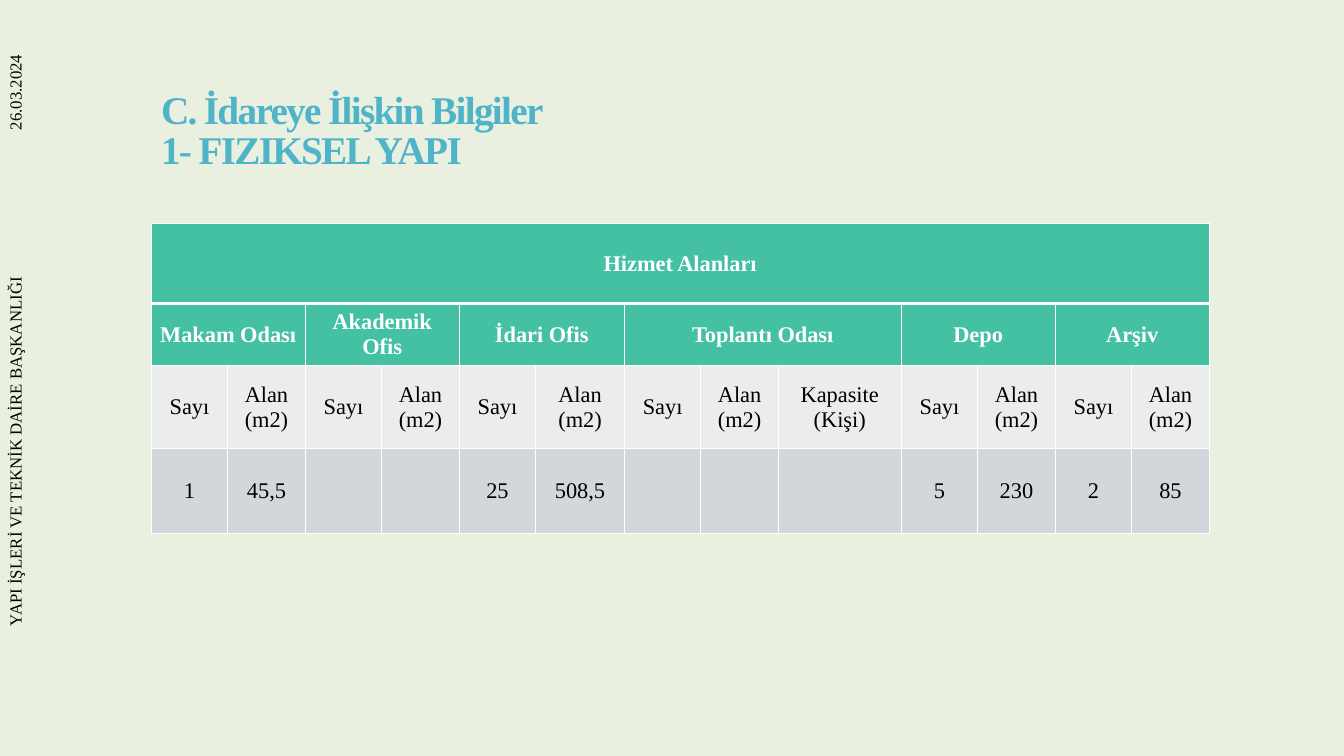
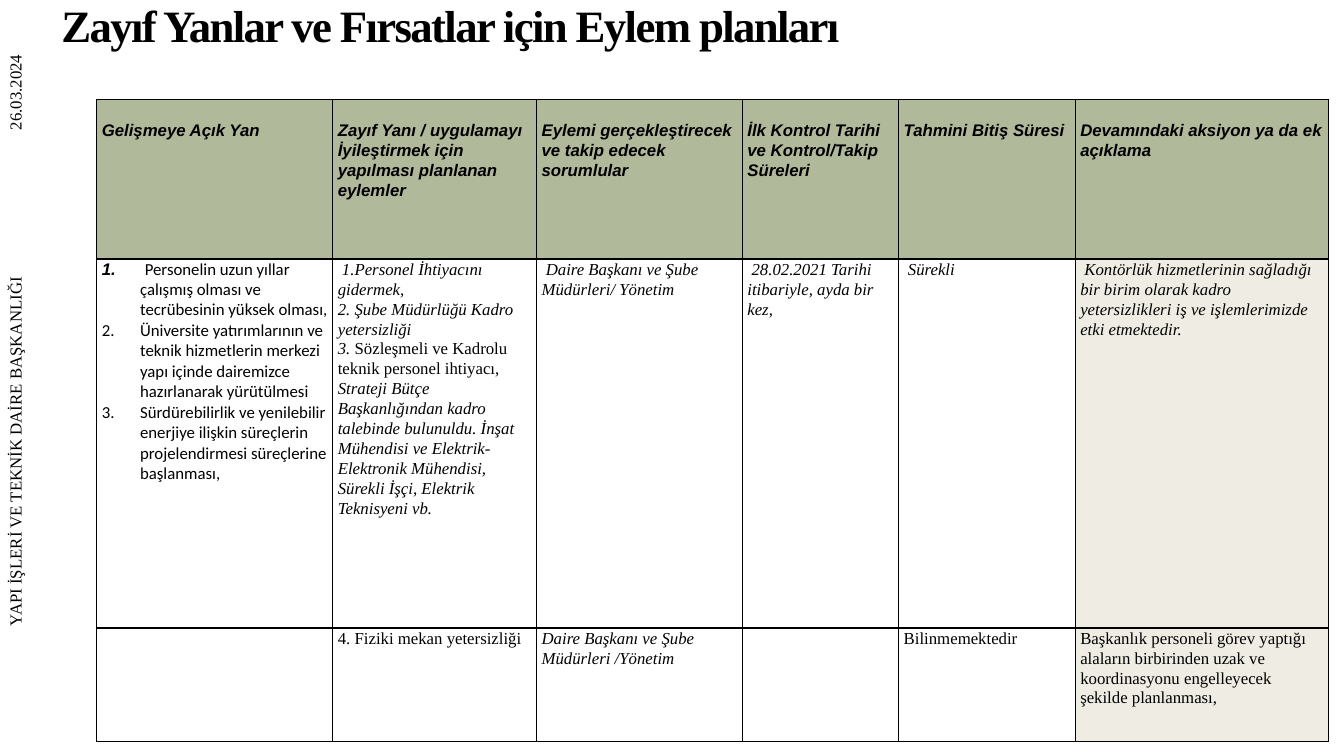
from dataclasses import dataclass, field
from typing import Any, NamedTuple, Optional

from lxml import etree
from pptx import Presentation
from pptx.dml.color import RGBColor
from pptx.enum.text import MSO_ANCHOR, PP_ALIGN
from pptx.oxml.ns import qn
from pptx.util import Emu, Inches, Pt

TOP, MIDDLE = MSO_ANCHOR.TOP, MSO_ANCHOR.MIDDLE
LEFT, CENTER = PP_ALIGN.LEFT, PP_ALIGN.CENTER

SLIDE_WIDTH, SLIDE_HEIGHT = Emu(12192000), Emu(6858000)
COLUMN, ROW = SLIDE_WIDTH // 160, SLIDE_HEIGHT // 90

COLORS = {
    "mint": "EAF0E0",
    "white": "FFFFFF",
    "black": "000000",
    "title": "50B4C8",
    "teal": "44C1A3",
    "pale": "EAECED",
    "grey": "D3D6DA",
    "olive": "B1B99B",
    "sand": "EFEDE3",
}
SERIF, SANS, BODY = "Times New Roman", "Arial", "Calibri"


class Style(NamedTuple):
    name: str
    size: float
    color: str = "black"
    bold: bool = False
    italic: bool = False
    spacing: float = 0


MARGIN_TEXT = Style(SERIF, 12)
PLAIN = Style(SERIF, 12)
ITALIC = Style(SERIF, 12, italic=True)
ACTION_HEADING = Style(SANS, 12, bold=True, italic=True)
LISTED = Style(BODY, 12)
AREA_HEADING = Style(SERIF, 16, "white", bold=True)
AREA_TEXT = Style(SERIF, 16)
TITLE = Style(SERIF, 28, "title", bold=True, spacing=-1.2)
LARGE_TITLE = Style(SERIF, 32, bold=True, spacing=-1.2)


class Box(NamedTuple):
    left: float
    top: float
    width: float
    height: float

    def lengths(self) -> tuple[Emu, ...]:
        units = (COLUMN, ROW, COLUMN, ROW)
        return tuple(Emu(round(share * unit)) for share, unit in zip(self, units))


class Piece(NamedTuple):
    text: str
    style: Style


@dataclass
class Line:
    pieces: list[Piece]
    align: Any = LEFT
    line_spacing: float = 1.0
    number_font: Optional[str] = None


@dataclass
class CellContent:
    lines: list[Line] = field(default_factory=list)
    fill: Optional[str] = None
    span: int = 1
    top_margin: float = 0


@dataclass
class TableLook:
    border: str
    side_margin: float
    anchor: Any
    first_row_border: float = 1


class MarginNote(NamedTuple):
    text: str
    box: Box


MARGIN_NOTES = [
    MarginNote("26.03.2024", Box(-6.6, 4.8, 18.48, 5.28)),
    MarginNote("YAPI İŞLERİ VE TEKNİK DAİRE BAŞKANLIĞI", Box(-26.4, 46.32, 55.8, 3)),
]


class AreaGroup(NamedTuple):
    label: str
    widths: list[float]
    values: list[str]


AREA_FIELDS = ["Sayı", "Alan (m2)", "Kapasite (Kişi)"]
AREA_GROUPS = [
    AreaGroup("Makam Odası", [0.76, 0.77], ["1", "45,5"]),
    AreaGroup("Akademik Ofis", [0.76, 0.77], ["", ""]),
    AreaGroup("İdari Ofis", [0.76, 0.88], ["25", "508,5"]),
    AreaGroup("Toplantı Odası", [0.76, 0.77, 1.22], ["", "", ""]),
    AreaGroup("Depo", [0.76, 0.77], ["5", "230"]),
    AreaGroup("Arşiv", [0.76, 0.77], ["2", "85"]),
]

ACTION_HEADINGS = [
    "Gelişmeye Açık Yan",
    "Zayıf Yanı / uygulamayı İyileştirmek için yapılması planlanan eylemler",
    "Eylemi gerçekleştirecek ve takip edecek sorumlular",
    "İlk Kontrol Tarihi ve Kontrol/Takip Süreleri",
    "Tahmini Bitiş Süresi",
    "Devamındaki aksiyon ya da ek açıklama",
]


def write_line(paragraph: Any, line: Line) -> None:
    formats = {"alignment": line.align, "line_spacing": line.line_spacing}
    properties = paragraph._p.get_or_add_pPr()
    if line.number_font:
        properties.set("marL", str(Inches(0.38)))
        properties.set("indent", str(-Inches(0.38)))
        etree.SubElement(properties, qn("a:buFont"), typeface=line.number_font)
        etree.SubElement(properties, qn("a:buAutoNum"), type="arabicPeriod")
    for name, value in formats.items():
        setattr(paragraph, name, value)
    for piece in line.pieces:
        for position, text in enumerate(piece.text.split("\n")):
            if position:
                paragraph.add_line_break()
            run = paragraph.add_run()
            run.text = text
            style = piece.style
            font_formats = {
                "name": style.name,
                "size": Pt(style.size),
                "bold": style.bold,
                "italic": style.italic,
            }
            for name, value in font_formats.items():
                setattr(run.font, name, value)
            run.font.color.rgb = RGBColor.from_string(COLORS[style.color])
            if style.spacing:
                run._r.get_or_add_rPr().set("spc", str(round(style.spacing * 100)))


def write_lines(text_frame: Any, lines: list[Line]) -> None:
    for position, line in enumerate(lines):
        paragraph = text_frame.add_paragraph() if position else text_frame.paragraphs[0]
        write_line(paragraph, line)


def add_text(slide: Any, box: Box, line: Line, anchor: Any = TOP, rotation: float = 0) -> None:
    shape = slide.shapes.add_textbox(*box.lengths())
    shape.rotation = rotation
    shape.text_frame.word_wrap = True
    shape.text_frame.vertical_anchor = anchor
    write_lines(shape.text_frame, [line])


def add_page(presentation: Any, background: str, title: str, box: Box, style: Style) -> Any:
    slide = presentation.slides.add_slide(presentation.slide_layouts[6])
    slide.background.fill.solid()
    slide.background.fill.fore_color.rgb = RGBColor.from_string(COLORS[background])
    for note in MARGIN_NOTES:
        add_text(slide, note.box, Line([Piece(note.text, MARGIN_TEXT)]), rotation=270)
    add_text(slide, box, Line([Piece(title, style)], line_spacing=0.85), MIDDLE)
    return slide


def set_borders(cell: Any, color: str, widths: dict[str, float]) -> None:
    properties = cell._tc.get_or_add_tcPr()
    for position, (side, width) in enumerate(widths.items()):
        border = etree.Element(qn(f"a:ln{side}"), w=str(Pt(width)))
        fill = etree.SubElement(border, qn("a:solidFill"))
        etree.SubElement(fill, qn("a:srgbClr"), val=COLORS[color])
        properties.insert(position, border)


def add_grid(
    slide: Any,
    box: Box,
    column_shares: list[float],
    row_shares: list[float],
    rows: list[list[CellContent]],
    look: TableLook,
) -> None:
    left, top, width, height = box.lengths()
    table = slide.shapes.add_table(
        len(row_shares), len(column_shares), left, top, width, height
    ).table
    table.first_row = table.horz_banding = False
    for column, share in zip(table.columns, column_shares):
        column.width = Emu(round(width * share / sum(column_shares)))
    for row, share in zip(table.rows, row_shares):
        row.height = Emu(round(height * share / sum(row_shares)))
    for row_index, contents in enumerate(rows):
        borders = {"L": 1, "R": 1, "T": 1, "B": 1}
        if row_index < 2:
            borders["T" if row_index else "B"] = look.first_row_border
        start = 0
        for content in contents:
            end = start + content.span
            cell = table.cell(row_index, start)
            if content.span > 1:
                cell.merge(table.cell(row_index, end - 1))
            formats = {
                "margin_left": Inches(look.side_margin),
                "margin_right": Inches(look.side_margin),
                "margin_top": Inches(content.top_margin),
                "margin_bottom": 0,
                "vertical_anchor": look.anchor,
            }
            for name, value in formats.items():
                setattr(cell, name, value)
            write_lines(cell.text_frame, content.lines)
            for column_index in range(start, end):
                part = table.cell(row_index, column_index)
                if content.fill:
                    part.fill.solid()
                    part.fill.fore_color.rgb = RGBColor.from_string(COLORS[content.fill])
                else:
                    part.fill.background()
                set_borders(part, look.border, borders)
            start = end


def area_cell(text: str, fill: str, style: Style = AREA_TEXT, span: int = 1) -> CellContent:
    lines = [Line([Piece(text, style)], CENTER)] if text else []
    return CellContent(lines, fill, span)


def action_line(*pieces: Piece) -> Line:
    return Line(list(pieces), line_spacing=1.07)


def action_cell(text: str, style: Style, fill: Optional[str] = None, top: float = 0) -> CellContent:
    return CellContent([action_line(Piece(text, style))], fill, top_margin=top)


def build_service_areas(presentation: Any) -> None:
    title = "C. İdareye İlişkin Bilgiler\n1- FIZIKSEL YAPI"
    slide = add_page(presentation, "mint", title, Box(18, 9, 126, 13.44), TITLE)
    widths = [width for group in AREA_GROUPS for width in group.widths]
    rows = [
        [area_cell("Hizmet Alanları", "teal", AREA_HEADING, len(widths))],
        [area_cell(group.label, "teal", AREA_HEADING, len(group.widths)) for group in AREA_GROUPS],
        [area_cell(name, "pale") for group in AREA_GROUPS for name in AREA_FIELDS[: len(group.widths)]],
        [area_cell(value, "grey") for group in AREA_GROUPS for value in group.values],
    ]
    look = TableLook("white", 0.07, MIDDLE, first_row_border=3)
    add_grid(slide, Box(18, 26.64, 126, 36.84), widths, [0.79, 0.62, 0.82, 0.84], rows, look)


def build_action_plans(presentation: Any) -> None:
    title = "Zayıf Yanlar ve Fırsatlar için Eylem planları"
    slide = add_page(presentation, "white", title, Box(6.12, 0, 147.84, 6.84), LARGE_TITLE)
    strengths = [
        Line([
            Piece(" ", ACTION_HEADING),
            Piece("Personelin uzun yıllar çalışmış olması ve tecrübesinin yüksek olması,", LISTED),
        ], number_font=SANS),
        Line([Piece("Üniversite yatırımlarının ve teknik hizmetlerin merkezi yapı içinde dairemizce hazırlanarak yürütülmesi", LISTED)], number_font=SERIF),
        Line([Piece("Sürdürebilirlik ve yenilebilir enerjiye ilişkin süreçlerin projelendirmesi süreçlerine başlanması,", LISTED)], number_font=SERIF),
    ]
    actions = [
        action_line(Piece(" 1.Personel İhtiyacını gidermek,", ITALIC)),
        action_line(Piece("2. Şube Müdürlüğü Kadro yetersizliği", ITALIC)),
        action_line(Piece("3. ", ITALIC), Piece("Sözleşmeli ve Kadrolu teknik personel ihtiyacı,", PLAIN)),
        action_line(Piece("Strateji Bütçe Başkanlığından kadro talebinde bulunuldu. İnşat Mühendisi ve Elektrik-Elektronik Mühendisi, Sürekli İşçi, Elektrik Teknisyeni vb.", ITALIC)),
    ]
    rows = [
        [action_cell(heading, ACTION_HEADING, "olive", 0.2) for heading in ACTION_HEADINGS],
        [
            CellContent(strengths),
            CellContent(actions),
            action_cell(" Daire Başkanı ve Şube Müdürleri/ Yönetim", ITALIC),
            action_cell(" 28.02.2021 Tarihi itibariyle, ayda bir kez,", ITALIC),
            action_cell(" Sürekli", ITALIC),
            action_cell(" Kontörlük hizmetlerinin sağladığı bir birim olarak kadro yetersizlikleri iş ve işlemlerimizde etki etmektedir.", ITALIC, "sand"),
        ],
        [
            CellContent(),
            action_cell("4. Fiziki mekan yetersizliği", PLAIN),
            action_cell("Daire Başkanı ve Şube Müdürleri /Yönetim", ITALIC),
            CellContent(),
            action_cell("Bilinmemektedir", PLAIN),
            action_cell("Başkanlık personeli görev yaptığı alaların birbirinden uzak ve koordinasyonu engelleyecek şekilde planlanması,", PLAIN, "sand"),
        ],
    ]
    widths = [2.34, 2.02, 2.04, 1.55, 1.75, 2.51]
    look = TableLook("black", 0.05, TOP)
    add_grid(slide, Box(11.52, 11.88, 146.64, 76.44), widths, [1.58, 3.66, 1.13], rows, look)


def main() -> None:
    presentation = Presentation()
    presentation.slide_width, presentation.slide_height = SLIDE_WIDTH, SLIDE_HEIGHT
    build_service_areas(presentation)
    build_action_plans(presentation)
    presentation.save("out.pptx")


if __name__ == "__main__":
    main()
